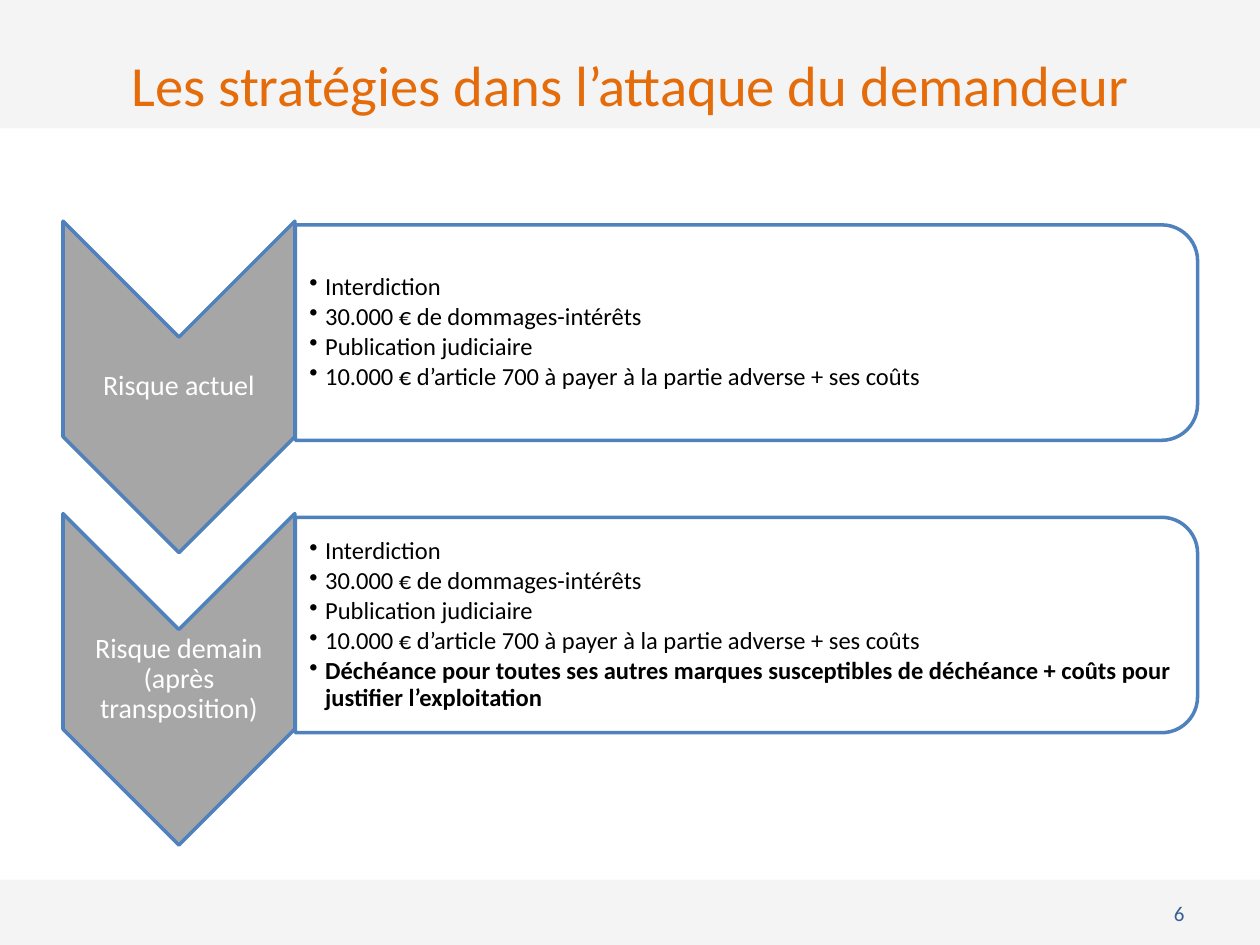
"""Build the slide on the claimant's attack strategies."""
from lxml import etree
from pptx import Presentation
from pptx.dml.color import RGBColor
from pptx.enum.shapes import MSO_SHAPE
from pptx.enum.text import MSO_ANCHOR, MSO_AUTO_SIZE, PP_ALIGN
from pptx.oxml.ns import qn
from pptx.util import Pt

RECT, CHEVRON, PANEL = MSO_SHAPE.RECTANGLE, MSO_SHAPE.CHEVRON, MSO_SHAPE.ROUND_2_SAME_RECTANGLE
LEFT, CENTER, RIGHT = PP_ALIGN.LEFT, PP_ALIGN.CENTER, PP_ALIGN.RIGHT
MIDDLE, FIXED = MSO_ANCHOR.MIDDLE, MSO_AUTO_SIZE.NONE

TITLE = "Les stratégies dans l’attaque du demandeur"
NUMBER = "6"
COMMON = [
    "Interdiction",
    "30.000 € de dommages-intérêts",
    "Publication judiciaire",
    "10.000 € d’article 700 à payer à la partie adverse + ses coûts",
]
EXTRA = ("Déchéance pour toutes ses autres marques susceptibles de déchéance"
         " + coûts pour justifier l’exploitation")
RISKS = [
    ("Risque actuel", COMMON, []),
    ("Risque demain (après transposition)", COMMON, [EXTRA]),
]
THEME = {
    "font": "Calibri", "title": "E46C0A", "number": "376092", "band": "EAEAEA",
    "arrow": "A6A6A6", "edge": "4F81BD", "light": "FFFFFF", "dark": "000000",
    "title_size": 32.4, "label_size": 16, "item_size": 14, "number_size": 12,
}
BANDS = [(0, -2.2, 720, 75.6), (0, 502.6, 723, 39.6)]
TOP, PITCH = 126.4, 167.1
ARROW_X, ARROW_W, ARROW_H = 36, 132.5, 189.4
PANEL_X, PANEL_W, PANEL_H = 168.8, 515.5, 123.1


def color(name):
    return RGBColor.from_string(THEME[name])


def write(frame, lines, size, ink, align=LEFT, bold=(), inset=(1, 1, 1, 1),
          after=0, space=1.0, bullet=False):
    frame.word_wrap = True
    frame.auto_size = FIXED
    frame.vertical_anchor = MIDDLE
    (frame.margin_left, frame.margin_top,
     frame.margin_right, frame.margin_bottom) = map(Pt, inset)
    for i, line in enumerate(lines):
        para = frame.paragraphs[0] if i == 0 else frame.add_paragraph()
        para.alignment = align
        para.line_spacing = space
        para.space_before, para.space_after = Pt(0), Pt(after)
        run = para.add_run()
        run.text = line
        font = run.font
        font.name, font.size = THEME["font"], Pt(THEME[size])
        font.bold = line in bold
        font.color.rgb = color(ink)
        if bullet:
            props = para._p.get_or_add_pPr()
            props.set("marL", str(Pt(9)))
            props.set("indent", str(Pt(-9)))
            etree.SubElement(props, qn("a:buChar")).set("char", "•")


def text(slide, box, lines, **form):
    write(slide.shapes.add_textbox(*map(Pt, box)).text_frame, lines, **form)


def draw(slide, kind, box, fill, alpha=100, edge=None):
    shape = slide.shapes.add_shape(kind, *map(Pt, box))
    shape.shadow.inherit = False
    shape.fill.solid()
    shape.fill.fore_color.rgb = color(fill)
    if alpha < 100:
        tone = shape._element.spPr.find(qn("a:solidFill"))[0]
        etree.SubElement(tone, qn("a:alpha")).set("val", str(alpha * 1000))
    if edge:
        shape.line.color.rgb = color(edge)
        shape.line.width = Pt(2)
    else:
        shape.line.fill.background()
    return shape


def turn(slide, kind, box, fill, **form):
    x, y, w, h = box
    side = (x + (w - h) / 2, y + (h - w) / 2, h, w)
    shape = draw(slide, kind, side, fill, edge="edge", **form)
    shape.rotation = 90


def main():
    deck = Presentation()
    deck.slide_width, deck.slide_height = Pt(720), Pt(540)
    slide = deck.slides.add_slide(deck.slide_layouts[5])

    for box in BANDS:
        band = draw(slide, RECT, box, "band", alpha=50)
        slide.shapes._spTree.insert(2, band._element)

    head = slide.shapes.title
    head.left, head.top, head.width, head.height = map(Pt, (36, 30, 648, 36))
    write(head.text_frame, [TITLE], size="title_size", ink="title", align=CENTER)
    text(slide, (516.2, 507.6, 167.8, 28.8), [NUMBER], size="number_size",
         ink="number", align=RIGHT, inset=(7.2, 3.6, 7.2, 3.6))

    for i, (label, items, strong) in enumerate(RISKS):
        y = TOP + i * PITCH
        notch = ARROW_W / 2
        turn(slide, CHEVRON, (ARROW_X, y, ARROW_W, ARROW_H), "arrow")
        text(slide, (ARROW_X, y + notch, ARROW_W, ARROW_H - 2 * notch), [label],
             size="label_size", ink="light", align=CENTER, space=0.9, after=5.6)
        turn(slide, PANEL, (PANEL_X, y + 2.1, PANEL_W, PANEL_H), "light", alpha=90)
        text(slide, (PANEL_X, y + 8.1, PANEL_W - 6, PANEL_H - 12), items + strong,
             size="item_size", ink="dark", bold=strong, inset=(8, 1, 1, 1),
             space=0.9, after=2, bullet=True)

    deck.save("out.pptx")


if __name__ == "__main__":
    main()
